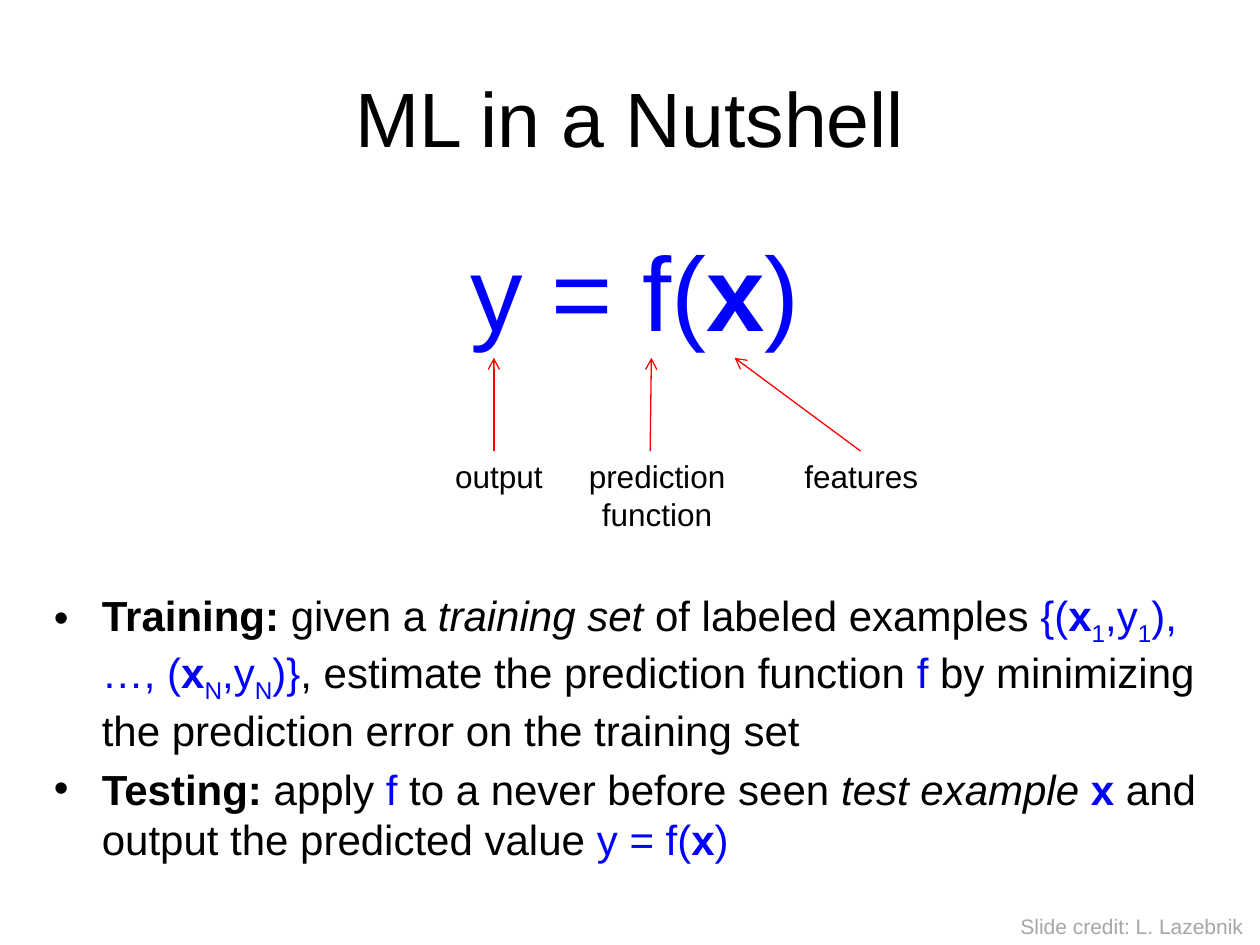
import pptx
import pptx.util
import pptx.dml.color
import pptx.enum.shapes
import pptx.enum.text
import pptx.oxml.ns
from lxml import etree

Inches = pptx.util.Inches
Pt = pptx.util.Pt
PP_ALIGN = pptx.enum.text.PP_ALIGN


def color(hex_string):
    return pptx.dml.color.RGBColor.from_string(hex_string)


def add_child(parent, tag, **attrs):
    return etree.SubElement(parent, pptx.oxml.ns.qn(tag), **attrs)


class Deck:
    font = "Arial"
    black, blue, red, gray = "000000", "0000FF", "FF0000", "A6A6A6"

    def __init__(self):
        self.prs = pptx.Presentation()
        self.prs.slide_width = Inches(10)
        self.prs.slide_height = Inches(7.5)
        self.s = self.prs.slides.add_slide(self.prs.slide_layouts[5])

    def run(self, p, text, size, style="", fill=black):
        r = p.add_run()
        r.text = text
        f = r.font
        f.name = self.font
        f.size = Pt(size)
        f.bold = "bold" in style
        f.italic = "italic" in style
        f.color.rgb = color(self.blue if "math" in style else fill)
        if "sub" in style:
            r._r.get_or_add_rPr().set("baseline", "-25000")

    def title(self, text, left, top, width, height):
        sp = self.s.shapes.title
        sp.left, sp.top = Inches(left), Inches(top)
        sp.width, sp.height = Inches(width), Inches(height)
        tf = sp.text_frame
        tf.vertical_anchor = pptx.enum.text.MSO_ANCHOR.MIDDLE
        p = tf.paragraphs[0]
        p.alignment = PP_ALIGN.CENTER
        self.run(p, text, 44)

    def text(self, paragraphs, left, top, width, height, size, fill=black,
             align=PP_ALIGN.LEFT, wrap=True, before=0, bullet=False):
        sp = self.s.shapes.add_textbox(
            Inches(left), Inches(top), Inches(width), Inches(height))
        tf = sp.text_frame
        tf.word_wrap = wrap
        for i, runs in enumerate(paragraphs):
            p = tf.add_paragraph() if i else tf.paragraphs[0]
            p.alignment = align
            p.space_before = Pt(before)
            if bullet:
                pPr = p._p.get_or_add_pPr()
                pPr.set("marL", str(Inches(0.38)))
                pPr.set("indent", str(-Inches(0.38)))
                add_child(pPr, "a:buFont", typeface=self.font)
                add_child(pPr, "a:buChar", char="•")
            for text, style in runs:
                self.run(p, text, size, style, fill)

    def arrow(self, x1, y1, x2, y2):
        c = self.s.shapes.add_connector(
            pptx.enum.shapes.MSO_CONNECTOR.STRAIGHT,
            Inches(x1), Inches(y1), Inches(x2), Inches(y2))
        c.line.color.rgb = color(self.red)
        c.line.width = Pt(0.75)
        add_child(c.line._get_or_add_ln(), "a:tailEnd", type="arrow")
        add_child(c._element.spPr, "a:effectLst")


def main():
    formula = [("y = f(", "math"), ("x", "math bold"), (")", "math")]
    training = [
        ("Training: ", "bold"), ("given a ", ""), ("training set ", "italic"),
        ("of labeled examples ", ""),
        ("{(", "math"), ("x", "math bold"), ("1", "math sub"),
        (",y", "math"), ("1", "math sub"),
        ("), …, (", "math"), ("x", "math bold"), ("N", "math sub"),
        (",y", "math"), ("N", "math sub"), (")}", "math"),
        (", estimate the prediction function ", ""), ("f ", "math"),
        ("by minimizing the prediction error on the training set", ""),
    ]
    testing = [
        ("Testing:", "bold"), (" apply ", ""), ("f", "math"),
        (" to a never before seen ", ""), ("test example ", "italic"),
        ("x", "math bold"), (" and output the predicted value ", ""),
    ] + formula

    deck = Deck()
    deck.title("ML in a Nutshell", 0.5, 0.3, 9, 1.25)
    deck.text([formula], 0.33, 1.75, 9.42, 1.2, 60,
              align=PP_ALIGN.CENTER, before=12)
    deck.text([training, testing], 0.33, 4.63, 9.42, 2.4, 24,
              before=4.8, bullet=True)

    for x_label, x_symbol in [(3.92, 3.92), (5.16, 5.17), (6.83, 5.83)]:
        deck.arrow(x_label, 3.58, x_symbol, 2.84)
    for label, left, width, height in [
            ("output", 3.51, 0.9, 0.4),
            ("prediction function", 4.18, 2.07, 0.71),
            ("features", 6.01, 1.65, 0.4)]:
        deck.text([[(label, "")]], left, 3.58, width, height, 18,
                  align=PP_ALIGN.CENTER, wrap=label != "output")

    deck.text([[("Slide credit: L. Lazebnik", "")]], 8, 7.2, 1.98, 0.3, 12,
              fill=deck.gray, wrap=False)
    deck.prs.save("out.pptx")


if __name__ == "__main__":
    main()
